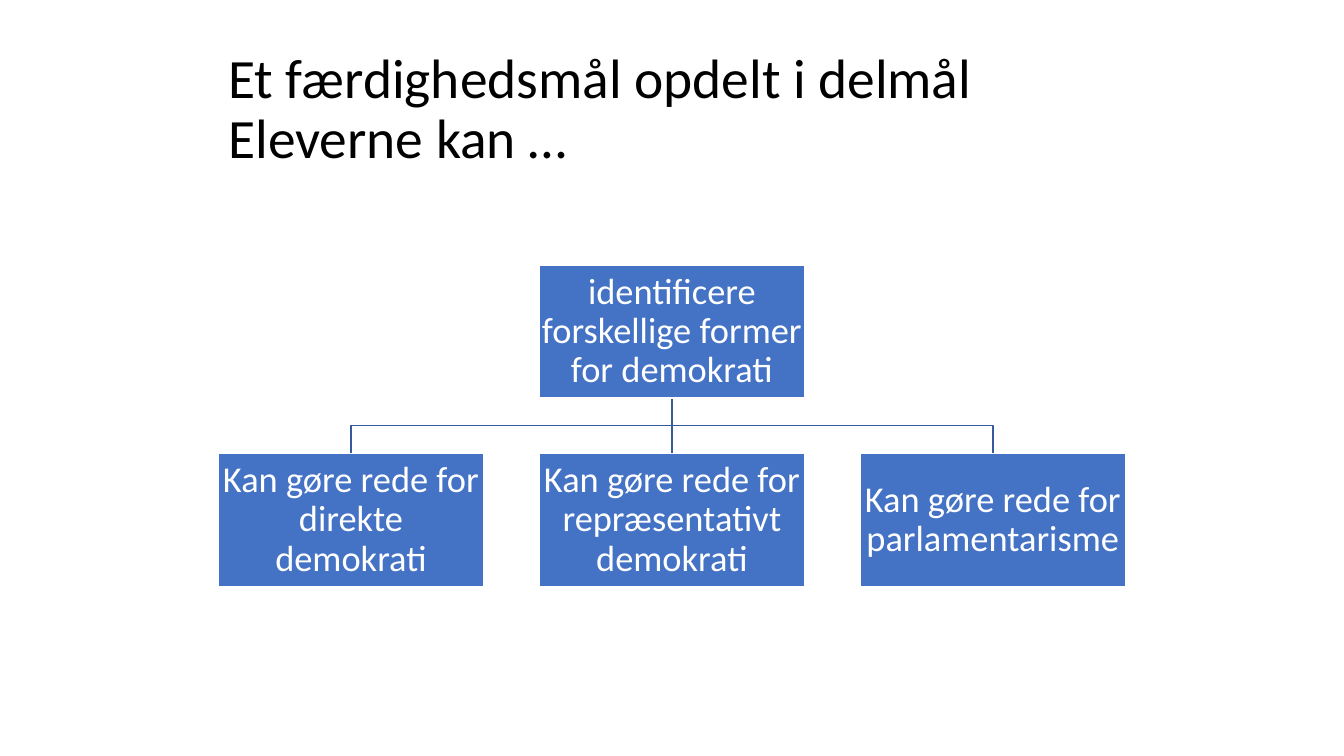
from lxml.etree import SubElement
from pptx import Presentation
from pptx.dml.color import RGBColor
from pptx.enum.shapes import MSO_CONNECTOR, MSO_SHAPE
from pptx.enum.text import MSO_ANCHOR, MSO_AUTO_SIZE, PP_ALIGN
from pptx.oxml.ns import qn
from pptx.util import Pt

BLACK = RGBColor(0x00, 0x00, 0x00)
WHITE = RGBColor(0xFF, 0xFF, 0xFF)
GOAL_BLUE = RGBColor(0x44, 0x72, 0xC4)
BRANCH_BLUE = RGBColor(0x36, 0x5B, 0x9D)
FONT = "Calibri"

TITLE_LINES = ["Et færdighedsmål opdelt i delmål", "Eleverne kan …"]
GOAL = "identificere forskellige former for demokrati"
SUBGOALS = [
    "Kan gøre rede for direkte demokrati",
    "Kan gøre rede for repræsentativt demokrati",
    "Kan gøre rede for parlamentarisme",
]
GOAL_WIDTH = 189.5
GOAL_HEIGHT = 94.75


def add_run(paragraph, text, size, color):
    run = paragraph.add_run()
    run.text = text
    run.font.name = FONT
    run.font.size = Pt(size)
    run.font.color.rgb = color


def place_title(slide, left, top, width, height):
    title = slide.shapes.title
    title.left, title.top = Pt(left), Pt(top)
    title.width, title.height = Pt(width), Pt(height)
    frame = title.text_frame
    frame.word_wrap = True
    frame.auto_size = MSO_AUTO_SIZE.NONE
    frame.vertical_anchor = MSO_ANCHOR.MIDDLE
    heading = frame.paragraphs[0]
    heading.alignment = PP_ALIGN.LEFT
    heading.line_spacing = 0.9
    for index, line in enumerate(TITLE_LINES):
        if index:
            heading.add_line_break()
        add_run(heading, line, 39.6, BLACK)


def add_goal(slide, text, left, top):
    goal = slide.shapes.add_shape(
        MSO_SHAPE.RECTANGLE, Pt(left), Pt(top), Pt(GOAL_WIDTH), Pt(GOAL_HEIGHT)
    )
    goal.shadow.inherit = False
    goal.fill.solid()
    goal.fill.fore_color.rgb = GOAL_BLUE
    goal.line.color.rgb = WHITE
    goal.line.width = Pt(1)
    frame = goal.text_frame
    frame.word_wrap = True
    frame.vertical_anchor = MSO_ANCHOR.MIDDLE
    frame.margin_left = frame.margin_right = Pt(1.3)
    frame.margin_top = frame.margin_bottom = Pt(1.3)
    paragraph = frame.paragraphs[0]
    paragraph.alignment = PP_ALIGN.CENTER
    paragraph.line_spacing = 0.9
    add_run(paragraph, text, 26, WHITE)


def add_branch(slide, start_x, start_y, end_x, end_y):
    if start_x == end_x:
        branch = slide.shapes.add_connector(
            MSO_CONNECTOR.STRAIGHT, Pt(start_x), Pt(start_y), Pt(end_x), Pt(end_y)
        )
        SubElement(branch.element.spPr, qn("a:effectLst"))
    else:
        middle_y = (start_y + end_y) / 2
        corners = [(start_x, middle_y), (end_x, middle_y), (end_x, end_y)]
        outline = slide.shapes.build_freeform(Pt(start_x), Pt(start_y))
        outline.add_line_segments([(Pt(x), Pt(y)) for x, y in corners], close=False)
        branch = outline.convert_to_shape()
        branch.shadow.inherit = False
        branch.fill.background()
    branch.line.color.rgb = BRANCH_BLUE
    branch.line.width = Pt(1)


def add_goal_tree(slide, left, top, width, height):
    pitch = (width - GOAL_WIDTH) / (len(SUBGOALS) - 1)
    lefts = [left + index * pitch for index in range(len(SUBGOALS))]
    goal_left = left + (width - GOAL_WIDTH) / 2
    subgoal_top = top + height - GOAL_HEIGHT
    half = GOAL_WIDTH / 2
    for subgoal_left in reversed(lefts):
        add_branch(
            slide, goal_left + half, top + GOAL_HEIGHT, subgoal_left + half, subgoal_top
        )
    add_goal(slide, GOAL, goal_left, top)
    for subgoal, subgoal_left in zip(SUBGOALS, lefts):
        add_goal(slide, subgoal, subgoal_left, subgoal_top)


def main():
    presentation = Presentation()
    presentation.slide_width = Pt(960)
    presentation.slide_height = Pt(540)
    slide = presentation.slides.add_slide(presentation.slide_layouts[5])
    place_title(slide, 156, 31.5, 672, 94.5)
    add_goal_tree(slide, 156, 189.5, 648, 229.25)
    presentation.save("out.pptx")


if __name__ == "__main__":
    main()
